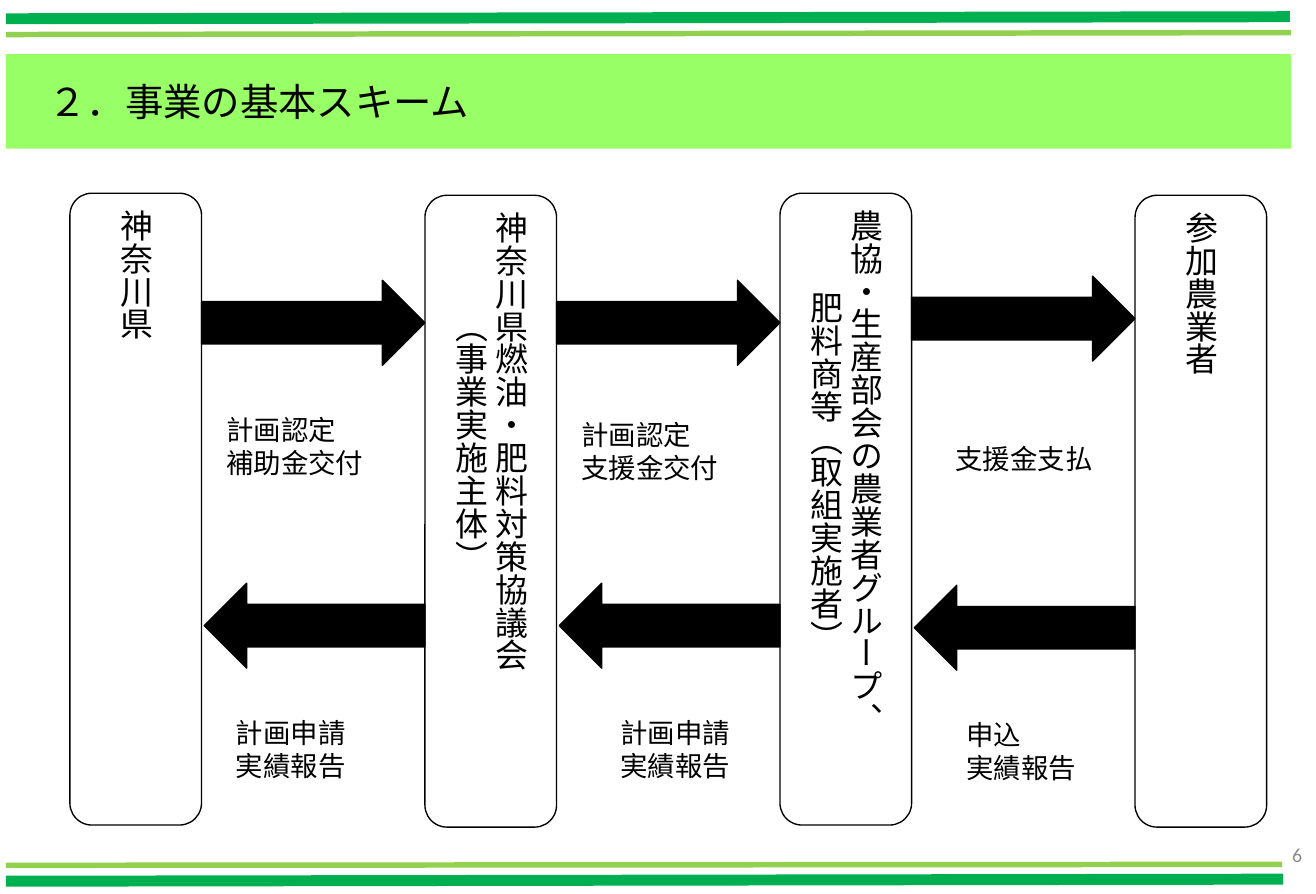
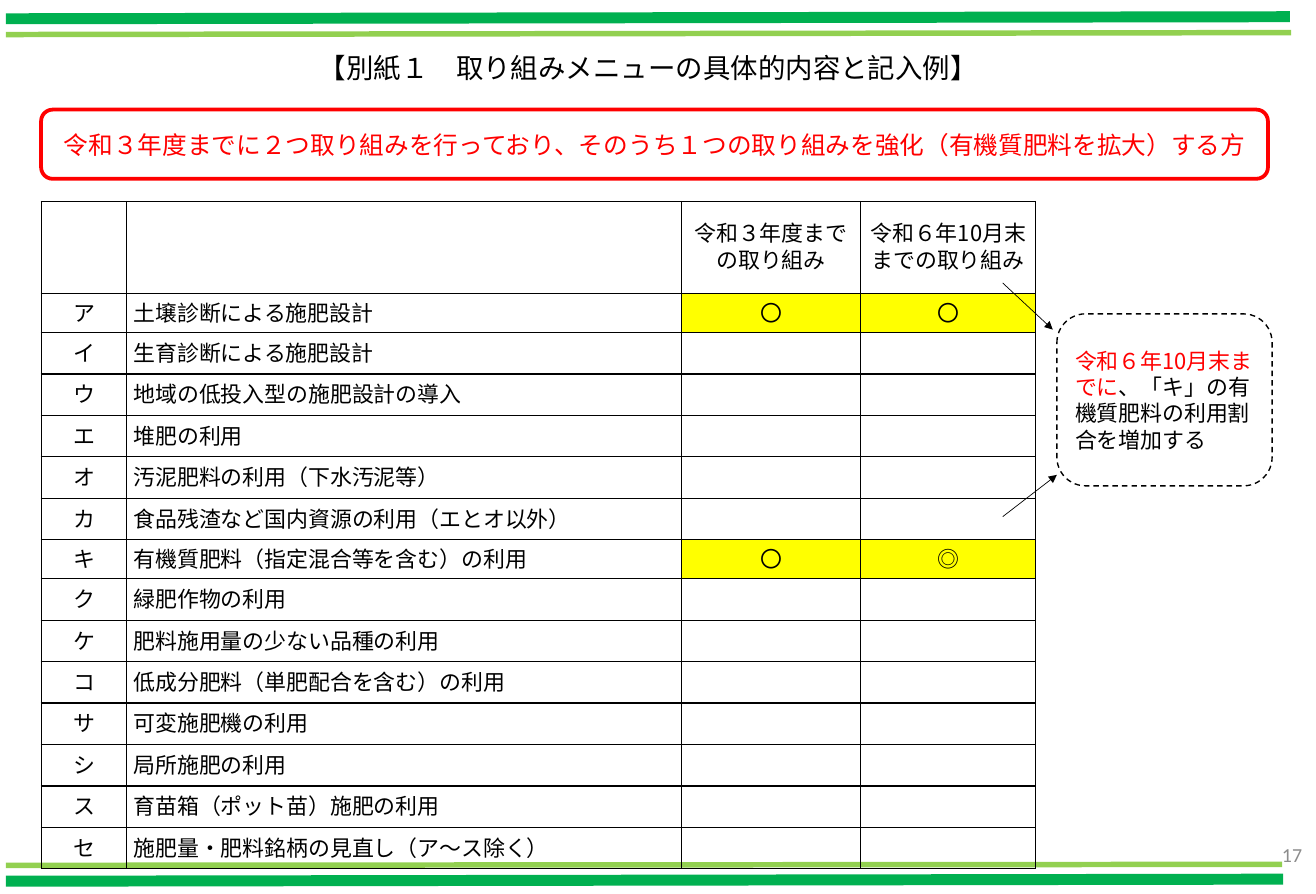
from lxml import etree
from pptx import Presentation
from pptx.dml.color import RGBColor
from pptx.enum.dml import MSO_LINE
from pptx.enum.shapes import MSO_CONNECTOR, MSO_SHAPE
from pptx.enum.text import MSO_ANCHOR, MSO_AUTO_SIZE, PP_ALIGN
from pptx.oxml.ns import qn
from pptx.util import Pt

LEFT, CENTER, RIGHT = PP_ALIGN.LEFT, PP_ALIGN.CENTER, PP_ALIGN.RIGHT
MIDDLE = MSO_ANCHOR.MIDDLE
NO_AUTOFIT = MSO_AUTO_SIZE.NONE
STRAIGHT = MSO_CONNECTOR.STRAIGHT
RECTANGLE_ROUNDED = MSO_SHAPE.ROUNDED_RECTANGLE
ARROW_RIGHT, ARROW_LEFT = MSO_SHAPE.RIGHT_ARROW, MSO_SHAPE.LEFT_ARROW
DASH = MSO_LINE.DASH

COLORS = {
    "black": "000000",
    "white": "FFFFFF",
    "red": "FF0000",
    "yellow": "FFFF00",
    "green": "00B050",
    "light_green": "92D050",
    "title_band": "99FF66",
    "page_number": "8C8C8C",
}
BODY_FONT, NUMBER_FONT = "Noto Sans CJK JP", "Calibri"
SLIDE_WIDTH, SLIDE_HEIGHT = 960, 652.3
TITLE_ONLY = 5

# Start x, start y, end x, end y, colour, width
BANDS = [
    (4.3, 13.7, 941, 12.2, "green", 8),
    (4.3, 25.2, 941.8, 23.8, "light_green", 4),
    (4.3, 643, 936, 641.5, "green", 8),
    (4.3, 631.4, 935.3, 630.7, "light_green", 4),
]

PARTIES = [
    ["神奈川県"],
    ["神奈川県燃油・肥料対策協議会", "（事業実施主体）"],
    ["農協・生産部会の農業者グループ、", "肥料商等（取組実施者）"],
    ["参加農業者"],
]
PARTY_WIDTH, PARTY_HEIGHT, PARTY_STAGGER = 96, 461, 1.5
ARROW_HEIGHT = 62
LABEL_WIDTH, LABEL_HEIGHT = 152, 111.5

# For each gap between parties: arrow top, label left, label top,
# label inset, alignment, label lines
PAYMENTS = [
    (63.5, 6, 129, 12, LEFT, ["計画認定", "補助金交付"]),
    (63.5, 6, 132.5, 12, LEFT, ["計画認定", "支援金交付"]),
    (60.5, 6, 137.5, 7.2, CENTER, ["支援金支払"]),
]
APPLICATIONS = [
    (284.5, 13, 349.5, 12, LEFT, ["計画申請", "実績報告"]),
    (284.5, 10.5, 349.5, 7.2, CENTER, ["計画申請", "実績報告"]),
    (286, 13, 351, 27, LEFT, ["申込", "実績報告"]),
]

MENU_HEADER = ["", "", "令和３年度までの取り組み", "令和６年10月末までの取り組み"]
MENU = [
    ("ア", "土壌診断による施肥設計", "〇", "〇"),
    ("イ", "生育診断による施肥設計", "", ""),
    ("ウ", "地域の低投入型の施肥設計の導入", "", ""),
    ("エ", "堆肥の利用", "", ""),
    ("オ", "汚泥肥料の利用（下水汚泥等）", "", ""),
    ("カ", "食品残渣など国内資源の利用（エとオ以外）", "", ""),
    ("キ", "有機質肥料（指定混合等を含む）の利用", "〇", "◎"),
    ("ク", "緑肥作物の利用", "", ""),
    ("ケ", "肥料施用量の少ない品種の利用", "", ""),
    ("コ", "低成分肥料（単肥配合を含む）の利用", "", ""),
    ("サ", "可変施肥機の利用", "", ""),
    ("シ", "局所施肥の利用", "", ""),
    ("ス", "育苗箱（ポット苗）施肥の利用", "", ""),
    ("セ", "施肥量・肥料銘柄の見直し（ア～ス除く）", "", ""),
]
MENU_COLUMNS = [62.5, 404.5, 131, 127.5]
HEADER_HEIGHT, MARKED_HEIGHT, PLAIN_HEIGHT = 67.2, 28.4, 30.25


def rgb(color):
    return RGBColor.from_string(COLORS[color])


def points(*lengths):
    return [Pt(length) for length in lengths]


def set_all(target, values):
    for name, value in values.items():
        setattr(target, name, value)


def write_paragraph(paragraph, runs, size, align=LEFT, font=BODY_FONT):
    """Fill a paragraph with (text, colour) runs."""
    paragraph.alignment = align
    for text, color in runs:
        run = paragraph.add_run()
        run.text = text
        run.font.color.rgb = rgb(color)
        set_all(run.font, {"size": Pt(size), "name": font, "bold": False})
        east_asian = etree.SubElement(run.font._element, qn("a:ea"))
        east_asian.set("typeface", font)


def write_lines(shape, lines, size, align=LEFT, inset=7.2, font=BODY_FONT):
    """Fill a shape with one paragraph for each list of runs."""
    frame = shape.text_frame
    set_all(frame, {
        "word_wrap": True,
        "auto_size": NO_AUTOFIT,
        "vertical_anchor": MIDDLE,
        "margin_left": Pt(inset),
        "margin_right": Pt(7.2),
        "margin_top": Pt(3.6),
        "margin_bottom": Pt(3.6),
    })
    for index, runs in enumerate(lines):
        paragraph = frame.add_paragraph() if index else frame.paragraphs[0]
        write_paragraph(paragraph, runs, size, align, font)


def in_color(lines, color="black"):
    return [[(line, color)] for line in lines]


def add_box(slide, preset, box, fill="white", outline="black", width=1):
    shape = slide.shapes.add_shape(preset, *points(*box))
    shape.shadow.inherit = False
    shape.fill.solid()
    shape.fill.fore_color.rgb = rgb(fill)
    shape.line.color.rgb = rgb(outline)
    shape.line.width = Pt(width)
    return shape


def add_line(slide, ends, color, width, arrow=False):
    line = slide.shapes.add_connector(STRAIGHT, *points(*ends))
    line.line.color.rgb = rgb(color)
    line.line.width = Pt(width)
    properties = line._element.spPr
    if arrow:
        head = etree.SubElement(properties.find(qn("a:ln")), qn("a:tailEnd"))
        head.set("type", "triangle")
    etree.SubElement(properties, qn("a:effectLst"))


def place_title(slide, box, text, size, align, inset=7.2, fill=None):
    title = slide.shapes.title
    set_all(title, dict(zip(("left", "top", "width", "height"), points(*box))))
    if fill:
        title.fill.solid()
        title.fill.fore_color.rgb = rgb(fill)
    write_lines(title, in_color([text]), size, align, inset)


def add_framed_slide(deck, page):
    """Add a slide with the green bands and its page number."""
    slide = deck.slides.add_slide(deck.slide_layouts[TITLE_ONLY])
    for *ends, color, width in BANDS:
        add_line(slide, ends, color, width)
    number = slide.shapes.add_textbox(*points(741, 609, 216, 29))
    write_lines(number, in_color([page], "page_number"), 14.5, RIGHT,
                font=NUMBER_FONT)
    return slide


def add_exchanges(slide, box, pitch, exchanges, preset, start):
    """Draw one direction of labelled arrows across the gaps."""
    left, top, _, _ = box
    for index, exchange in enumerate(exchanges):
        arrow_top, label_left, label_top, inset, align, lines = exchange
        gap_left = left + index * pitch + PARTY_WIDTH
        arrow_width = pitch - PARTY_WIDTH - start
        add_box(slide, preset, (gap_left + start, top + arrow_top,
                                arrow_width, ARROW_HEIGHT), "black")
        label = slide.shapes.add_textbox(*points(
            gap_left + label_left, top + label_top, LABEL_WIDTH, LABEL_HEIGHT))
        write_lines(label, in_color(lines), 20, align, inset)


def add_scheme(slide, box):
    """Draw the parties as pillars and the exchanges between them."""
    left, top, width, _ = box
    pitch = (width - PARTY_WIDTH) / (len(PARTIES) - 1)
    for index, lines in enumerate(PARTIES):
        pillar = add_box(slide, RECTANGLE_ROUNDED, (
            left + index * pitch, top + index % 2 * PARTY_STAGGER,
            PARTY_WIDTH, PARTY_HEIGHT))
        write_lines(pillar, in_color(lines), 24, CENTER)
        pillar.text_frame._txBody.bodyPr.set("vert", "eaVert")
    add_exchanges(slide, box, pitch, PAYMENTS, ARROW_RIGHT, 0)
    add_exchanges(slide, box, pitch, APPLICATIONS, ARROW_LEFT, 2)


def add_borders(cell):
    properties = cell._tc.get_or_add_tcPr()
    for side in ("lnL", "lnR", "lnT", "lnB"):
        border = etree.SubElement(properties, qn(f"a:{side}"), w=str(Pt(1)))
        fill = etree.SubElement(border, qn("a:solidFill"))
        etree.SubElement(fill, qn("a:srgbClr"), val=COLORS["black"])


def format_menu_cell(cell, text, row, column):
    add_borders(cell)
    if row and column > 1 and text:
        cell.fill.solid()
        cell.fill.fore_color.rgb = rgb("yellow")
    else:
        cell.fill.background()
    set_all(cell, {"vertical_anchor": MIDDLE,
                   "margin_left": Pt(5), "margin_right": Pt(5)})
    paragraph = cell.text_frame.paragraphs[0]
    paragraph.line_spacing = Pt(21 if row else 20)
    paragraph.font.size = Pt(16)
    if text:
        align = LEFT if column == 1 else CENTER
        write_paragraph(paragraph, [(text, "black")], 16, align)


def add_menu_table(slide, left, top):
    rows = [MENU_HEADER, *MENU]
    heights = [HEADER_HEIGHT] + [
        MARKED_HEIGHT if row[2] else PLAIN_HEIGHT for row in MENU]
    table = slide.shapes.add_table(
        len(rows), len(MENU_COLUMNS),
        *points(left, top, sum(MENU_COLUMNS), sum(heights))).table
    set_all(table, {"first_row": False, "horz_banding": False})
    for column, width in zip(table.columns, MENU_COLUMNS):
        column.width = Pt(width)
    for row, (texts, height) in enumerate(zip(rows, heights)):
        table.rows[row].height = Pt(height)
        for column, text in enumerate(texts):
            format_menu_cell(table.cell(row, column), text, row, column)


def add_callout(slide, box):
    """Draw the dashed remark and the two arrows that lead to it."""
    left, top, _, height = box
    for start_y, end_x, end_y in ((-22.5, -3, 11.5), (148, 0, height - 8)):
        add_line(slide, (left - 39.5, top + start_y, left + end_x, top + end_y),
                 "black", 0.5, arrow=True)
    remark = add_box(slide, RECTANGLE_ROUNDED, box)
    remark.line.dash_style = DASH
    write_lines(remark, [[
        ("令和６年10月末までに", "red"),
        ("、「キ」の有機質肥料の利用割合を増加する", "black"),
    ]], 16)


def build_scheme_slide(deck):
    slide = add_framed_slide(deck, "6")
    place_title(slide, (4.3, 39.5, 937.5, 69), "２．事業の基本スキーム", 28, LEFT,
                inset=31, fill="title_band")
    add_scheme(slide, (51, 141, 873, 462.5))


def build_menu_slide(deck):
    slide = add_framed_slide(deck, "17")
    place_title(slide, (205, 29.5, 536, 40),
                "【別紙１　取り組みメニューの具体的内容と記入例】", 20, CENTER)
    condition = add_box(slide, RECTANGLE_ROUNDED, (30, 80, 895, 50.5),
                        outline="red", width=2.75)
    write_lines(condition, in_color([
        "令和３年度までに２つ取り組みを行っており、"
        "そのうち１つの取り組みを強化（有機質肥料を拡大）する方"], "red"), 18, CENTER)
    add_menu_table(slide, 30, 147)
    add_callout(slide, (771, 229, 157, 125.5))


def main():
    deck = Presentation()
    deck.slide_width, deck.slide_height = points(SLIDE_WIDTH, SLIDE_HEIGHT)
    build_scheme_slide(deck)
    build_menu_slide(deck)
    deck.save("out.pptx")


if __name__ == "__main__":
    main()
